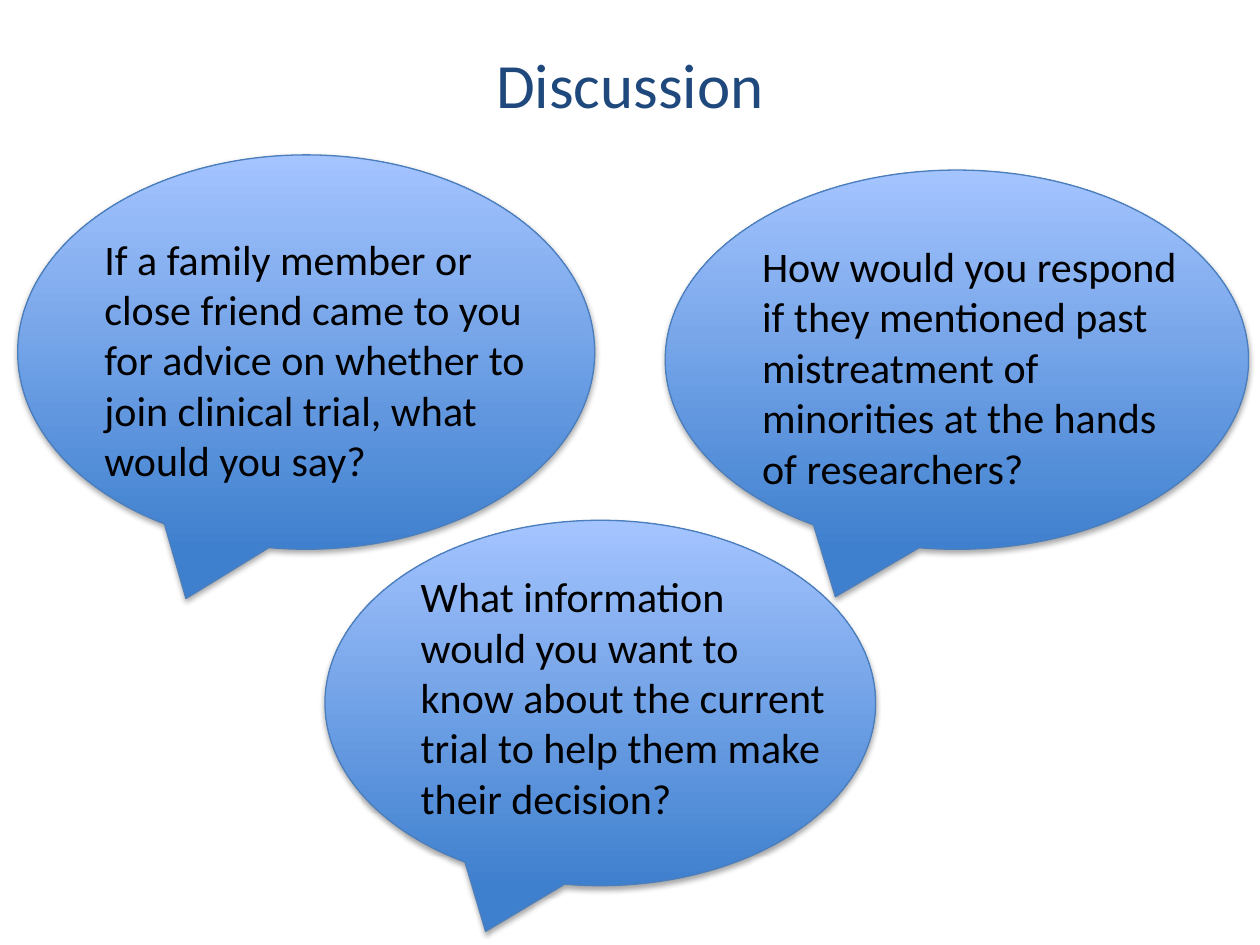
from dataclasses import dataclass

from lxml.etree import SubElement
from pptx import Presentation
from pptx.dml.color import RGBColor
from pptx.enum.shapes import MSO_SHAPE
from pptx.enum.text import MSO_ANCHOR, PP_ALIGN
from pptx.oxml.ns import qn
from pptx.util import Inches, Pt


@dataclass(frozen=True)
class Theme:
    font: str = "Calibri"
    title_size: int = 36
    body_size: int = 24
    title: str = "1F497D"
    body: str = "000000"
    bubble_bottom: str = "3F80CE"
    bubble_top: str = "A4C4FF"
    outline: str = "4B7EBC"
    shadow: str = "000000"


THEME = Theme()

# Each entry: bubble area, text area, question
QUESTIONS = [
    ((0.14, 1.23, 4.58, 3.13), (0.73, 1.8, 3.7, 2.12),
     "If a family member or close friend came to you for advice on "
     "whether to join clinical trial, what would you say?"),
    ((5.28, 1.35, 4.63, 3.01), (5.95, 1.86, 3.67, 2.12),
     "How would you respond if they mentioned past mistreatment of "
     "minorities at the hands of researchers?"),
    ((2.58, 4.13, 4.37, 2.9), (3.24, 4.48, 3.52, 2.12),
     "What information would you want to know about the current trial "
     "to help them make their decision?"),
]


def add_text(page, area, text, *, size, color, align=PP_ALIGN.LEFT,
             anchor=MSO_ANCHOR.TOP):
    box = page.shapes.add_textbox(*map(Inches, area))
    frame = box.text_frame
    frame.word_wrap = True
    frame.vertical_anchor = anchor
    para = frame.paragraphs[0]
    para.alignment = align
    span = para.add_run()
    span.text = text
    span.font.name = THEME.font
    span.font.size = Pt(size)
    span.font.color.rgb = RGBColor.from_string(color)


def add_soft_shadow(shape):
    shape.shadow.inherit = False
    effects = shape._element.spPr.find(qn("a:effectLst"))
    shadow = SubElement(effects, qn("a:outerShdw"), blurRad=str(Pt(3.1)),
                        dist=str(Pt(1.8)), dir="5400000", rotWithShape="0")
    color = SubElement(shadow, qn("a:srgbClr"), val=THEME.shadow)
    SubElement(color, qn("a:alpha"), val="35000")


def add_bubble(page, area):
    bubble = page.shapes.add_shape(MSO_SHAPE.OVAL_CALLOUT, *map(Inches, area))
    bubble.fill.gradient()
    bubble.fill.gradient_angle = 90
    colors = (THEME.bubble_bottom, THEME.bubble_top)
    for stop, color in zip(bubble.fill.gradient_stops, colors):
        stop.color.rgb = RGBColor.from_string(color)
    bubble.line.color.rgb = RGBColor.from_string(THEME.outline)
    bubble.line.width = Pt(0.75)
    add_soft_shadow(bubble)


def main():
    deck = Presentation()
    deck.slide_width, deck.slide_height = Inches(10), Inches(7.5)
    page = deck.slides.add_slide(deck.slide_layouts[6])

    # Title
    add_text(page, (0.5, 0.3, 9, 0.72), "Discussion", size=THEME.title_size,
             color=THEME.title, align=PP_ALIGN.CENTER, anchor=MSO_ANCHOR.MIDDLE)

    # Speech bubbles with their questions
    for bubble_area, text_area, question in QUESTIONS:
        add_bubble(page, bubble_area)
        add_text(page, text_area, question, size=THEME.body_size,
                 color=THEME.body)

    deck.save("out.pptx")


if __name__ == "__main__":
    main()
